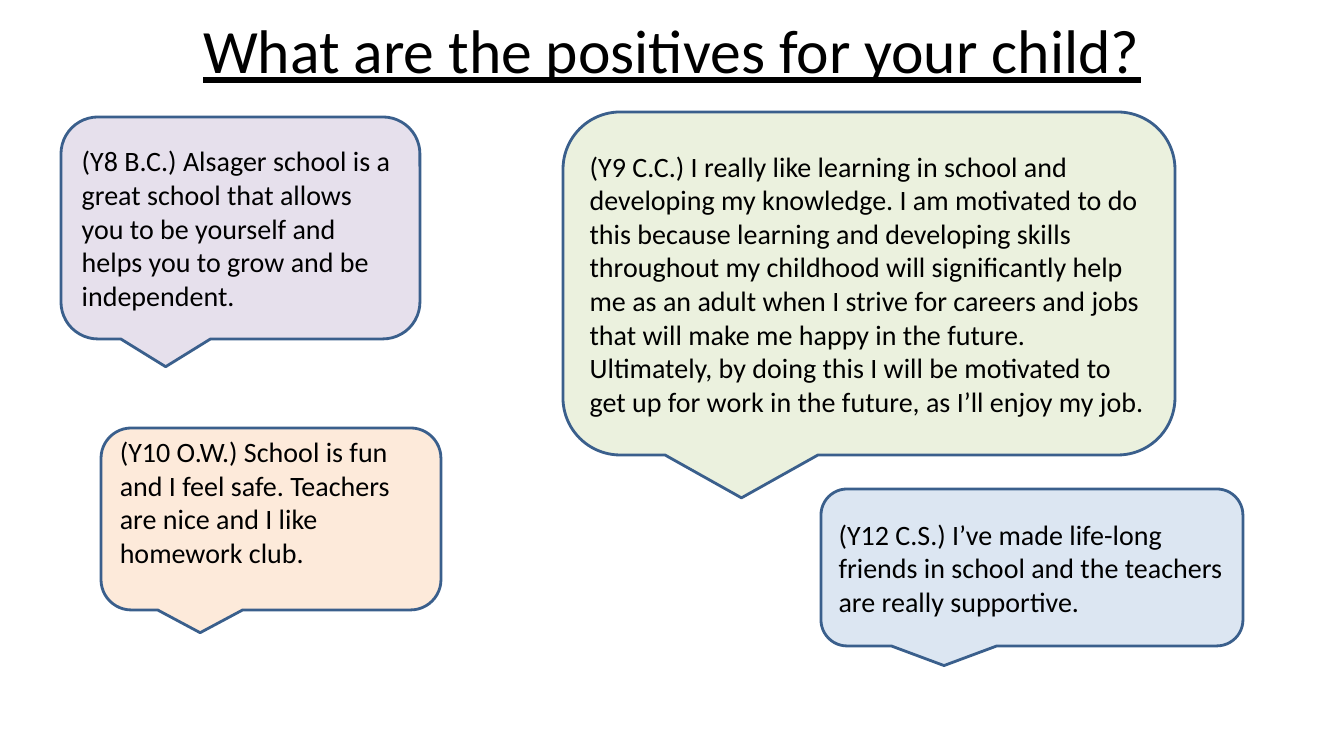
import pptx
import pptx.dml.color
import pptx.enum.shapes
import pptx.enum.text
import pptx.util

RGBColor = pptx.dml.color.RGBColor
BLACK = RGBColor(0x00, 0x00, 0x00)
OUTLINE = RGBColor(0x3A, 0x5F, 0x8C)
GREEN = RGBColor(0xEB, 0xF1, 0xDE)
BLUE = RGBColor(0xDC, 0xE6, 0xF2)
ORANGE = RGBColor(0xFD, 0xEA, 0xDA)
PURPLE = RGBColor(0xE6, 0xE0, 0xEC)

QUOTES = [
    ((563, 112, 612, 343), GREEN, 5,
     "(Y9 C.C.) I really like learning in school and developing my knowledge. "
     "I am motivated to do this because learning and developing skills throughout "
     "my childhood will significantly help me as an adult when I strive for careers "
     "and jobs that will make me happy in the future. Ultimately, by doing this I will "
     "be motivated to get up for work in the future, as I’ll enjoy my job."),
    ((821, 489, 422, 157), BLUE, 5,
     "(Y12 C.S.) I’ve made life-long friends in school and the teachers are "
     "really supportive."),
    ((101, 428, 340, 182), ORANGE, 39,
     "(Y10 O.W.) School is fun and I feel safe. Teachers are nice and I like "
     "homework club."),
    ((61, 117, 359, 222), PURPLE, 5,
     "(Y8 B.C.) Alsager school is a great school that allows you to be yourself "
     "and helps you to grow and be independent."),
]


class Slide:
    """Holds the style and the current slide; lengths are in px."""

    font = "Calibri"
    scale = 12192000 / 1344

    def __init__(self, deck):
        deck.slide_width, deck.slide_height = self.emu(1344), self.emu(756)
        self.shapes = deck.slides.add_slide(deck.slide_layouts[6]).shapes

    def emu(self, px):
        return pptx.util.Emu(round(px * self.scale))

    def add_words(self, frame, words, size, align, underline=None):
        frame.word_wrap = True
        frame.vertical_anchor = pptx.enum.text.MSO_ANCHOR.MIDDLE
        paragraph = frame.paragraphs[0]
        paragraph.alignment = align
        run = paragraph.add_run()
        run.text = words
        run.font.name = self.font
        run.font.size = pptx.util.Pt(size)
        run.font.underline = underline
        run.font.color.rgb = BLACK

    def title(self, place, words):
        heading = self.shapes.add_textbox(*map(self.emu, place))
        self.add_words(heading.text_frame, words, 44,
                       pptx.enum.text.PP_ALIGN.CENTER, underline=True)

    def quote(self, place, fill, bottom_margin, words):
        bubble = self.shapes.add_shape(
            pptx.enum.shapes.MSO_SHAPE.ROUNDED_RECTANGULAR_CALLOUT,
            *map(self.emu, place))
        bubble.shadow.inherit = False
        bubble.fill.solid()
        bubble.fill.fore_color.rgb = fill
        bubble.line.color.rgb = OUTLINE
        bubble.line.width = pptx.util.Pt(2)
        bubble.text_frame.margin_bottom = self.emu(bottom_margin)
        self.add_words(bubble.text_frame, words, 20, pptx.enum.text.PP_ALIGN.LEFT)


def main():
    deck = pptx.Presentation()
    slide = Slide(deck)
    slide.title((67, -14, 1210, 126), "What are the positives for your child?")
    for quote in QUOTES:
        slide.quote(*quote)
    deck.save("out.pptx")


if __name__ == "__main__":
    main()
